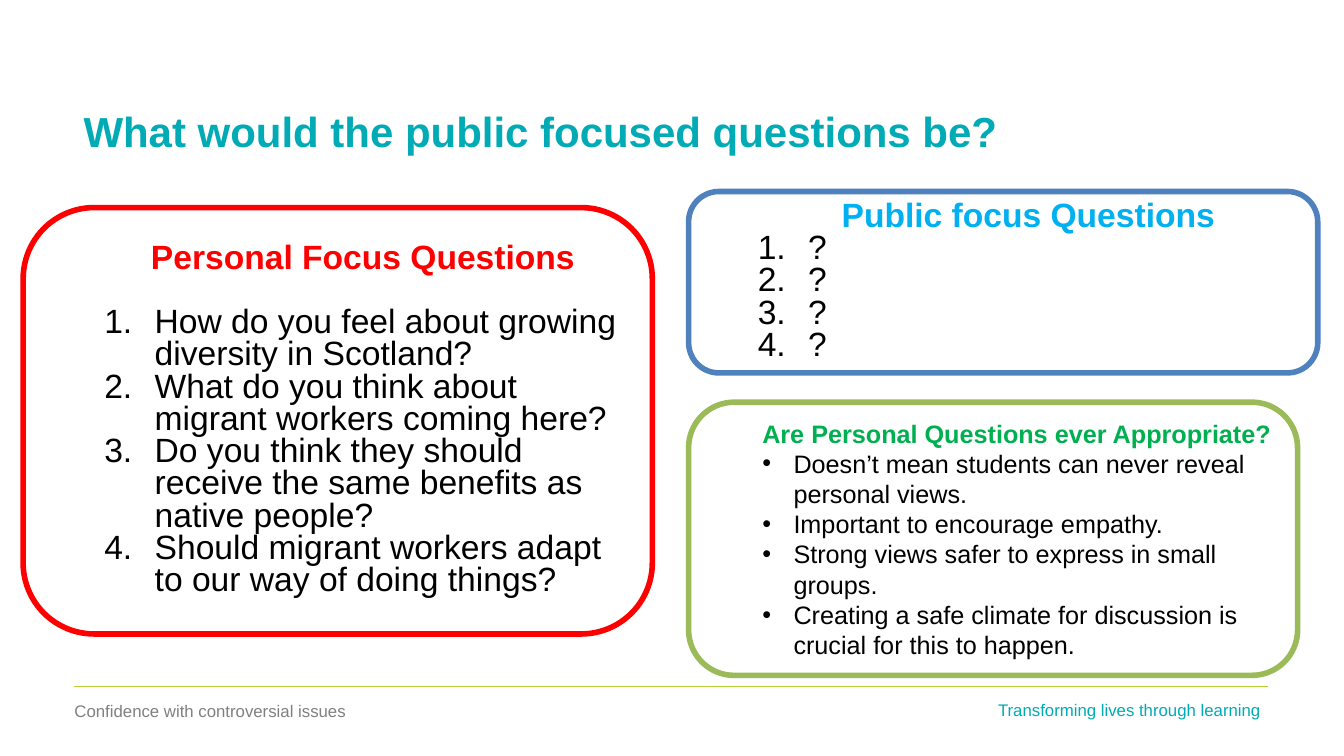
from dataclasses import dataclass

from lxml import etree
from pptx import Presentation
from pptx.dml.color import RGBColor
from pptx.enum.shapes import MSO_CONNECTOR, MSO_SHAPE
from pptx.enum.text import MSO_ANCHOR, PP_ALIGN
from pptx.oxml.ns import qn
from pptx.util import Emu, Pt

PX = 9144
FONT = "Arial"
STRAIGHT = MSO_CONNECTOR.STRAIGHT
ROUND = MSO_SHAPE.ROUNDED_RECTANGLE
MIDDLE, TOP = MSO_ANCHOR.MIDDLE, MSO_ANCHOR.TOP
LEFT, CENTER = PP_ALIGN.LEFT, PP_ALIGN.CENTER

WHITE = RGBColor(0xFF, 0xFF, 0xFF)
BLACK = RGBColor(0x00, 0x00, 0x00)
GREY = RGBColor(0x80, 0x80, 0x80)
TEAL = RGBColor(0x00, 0xAB, 0xB5)
LIME = RGBColor(0xB3, 0xD2, 0x36)
RED = RGBColor(0xFF, 0x00, 0x00)
BLUE = RGBColor(0x4F, 0x81, 0xBD)
SKY = RGBColor(0x00, 0xB0, 0xF0)
OLIVE = RGBColor(0x9B, 0xBB, 0x59)
GREEN = RGBColor(0x00, 0xB0, 0x50)


@dataclass(frozen=True)
class Box:
    left: int
    top: int
    width: int
    height: int

    def emu(self) -> list[Emu]:
        return [Emu(n * PX) for n in (self.left, self.top, self.width, self.height)]


@dataclass(frozen=True)
class Label:
    box: Box
    text: str
    size: int
    color: RGBColor
    bold: bool = False
    anchor: MSO_ANCHOR = TOP


@dataclass(frozen=True)
class Style:
    size: int
    pitch: float
    align: PP_ALIGN
    margin: int
    hang: int
    tag: str
    key: str
    mark: str


@dataclass(frozen=True)
class Panel:
    box: Box
    edge: RGBColor
    head: str
    color: RGBColor
    items: tuple[str, ...]
    style: Style
    gap: int = 0


NUMBER = Style(24, 0.8, CENTER, 100, 50, "a:buAutoNum", "type", "arabicPeriod")
BULLET = Style(18, 1.0, LEFT, 81, 31, "a:buChar", "char", "•")

LABELS = (
    Label(Box(64, 690, 301, 30), "Confidence with controversial issues", 12, GREY),
    Label(Box(980, 689, 301, 30), "Transforming lives through learning", 12, TEAL),
    Label(Box(73, 91, 1185, 78), "What would the public focused questions be?",
          30, TEAL, True, MIDDLE),
)

PANELS = (
    Panel(Box(23, 206, 624, 423), RED, "Personal Focus Questions", RED, (
        "How do you feel about growing diversity in Scotland?",
        "What do you think about migrant workers coming here?",
        "Do you think they should receive the same benefits as native people?",
        "Should migrant workers adapt to our way of doing things?",
    ), NUMBER, 23),
    Panel(Box(683, 190, 624, 180), BLUE, "Public focus Questions", SKY,
          ("?",) * 4, NUMBER),
    Panel(Box(683, 399, 604, 271), OLIVE,
          "Are Personal Questions ever Appropriate?", GREEN, (
              "Doesn’t mean students can never reveal personal views.",
              "Important to encourage empathy.",
              "Strong views safer to express in small groups.",
              "Creating a safe climate for discussion is crucial for this to happen.",
          ), BULLET),
)


def add_run(para, text: str, size: int, color: RGBColor, bold: bool) -> None:
    run = para.add_run()
    run.text = text
    run.font.name = FONT
    run.font.size = Pt(size)
    run.font.bold = bold
    run.font.color.rgb = color


def indent(para, margin: int, hang: int) -> etree._Element:
    props = para._p.get_or_add_pPr()
    props.set("marL", str(margin * PX))
    props.set("indent", str(-hang * PX))
    return props


def draw_label(slide, label: Label) -> None:
    frame = slide.shapes.add_textbox(*label.box.emu()).text_frame
    frame.word_wrap = True
    frame.vertical_anchor = label.anchor
    add_run(frame.paragraphs[0], label.text, label.size, label.color, label.bold)


def draw_panel(slide, panel: Panel) -> None:
    style = panel.style
    shape = slide.shapes.add_shape(ROUND, *panel.box.emu())
    shape.shadow.inherit = False
    shape.fill.solid()
    shape.fill.fore_color.rgb = WHITE
    shape.line.color.rgb = panel.edge
    shape.line.width = Pt(4)
    frame = shape.text_frame
    frame.word_wrap = True
    frame.vertical_anchor = MIDDLE

    head = frame.paragraphs[0]
    head.alignment = style.align
    head.line_spacing = style.pitch
    indent(head, 50, 0)
    add_run(head, panel.head, style.size, panel.color, True)

    for rank, text in enumerate(panel.items):
        para = frame.add_paragraph()
        para.alignment = LEFT
        para.line_spacing = style.pitch
        para.space_before = Pt(0 if rank else panel.gap)
        props = indent(para, style.margin, style.hang)
        etree.SubElement(props, qn("a:buFont")).set("typeface", FONT)
        etree.SubElement(props, qn(style.tag)).set(style.key, style.mark)
        add_run(para, text, style.size, BLACK, False)


def draw_rule(slide) -> None:
    rule = slide.shapes.add_connector(
        STRAIGHT, *(Emu(n * PX) for n in (73, 681, 1258, 681)))
    rule.line.color.rgb = LIME
    rule.line.width = Pt(0.75)
    etree.SubElement(rule._element.spPr, qn("a:effectLst"))


def main() -> None:
    deck = Presentation()
    deck.slide_width = Emu(1333 * PX)
    deck.slide_height = Emu(750 * PX)
    slide = deck.slides.add_slide(deck.slide_layouts[6])
    draw_rule(slide)
    for label in LABELS:
        draw_label(slide, label)
    for panel in PANELS:
        draw_panel(slide, panel)
    deck.save("out.pptx")


if __name__ == "__main__":
    main()
